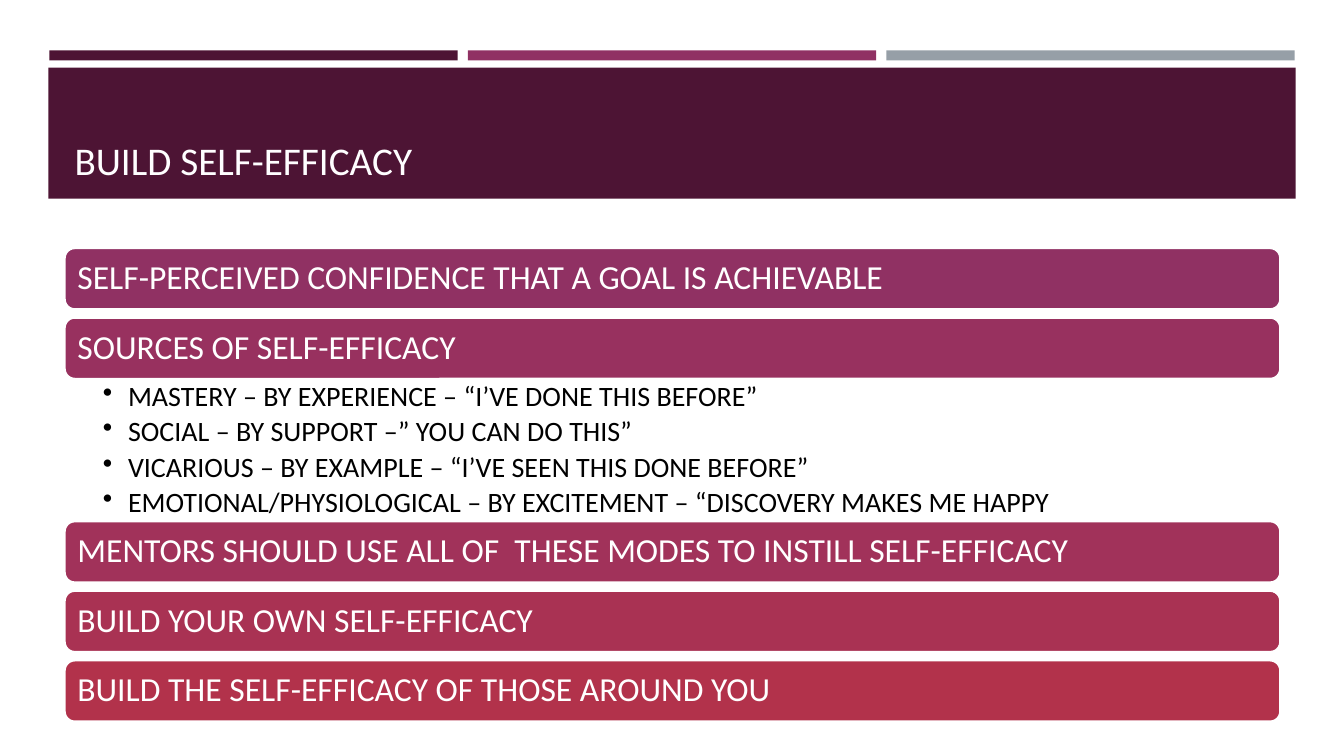
from dataclasses import dataclass

from lxml import etree
from pptx import Presentation
from pptx.dml.color import RGBColor
from pptx.enum.shapes import MSO_SHAPE
from pptx.enum.text import MSO_ANCHOR, PP_ALIGN
from pptx.oxml.ns import qn
from pptx.util import Inches, Pt

RECT = MSO_SHAPE.RECTANGLE
ROUNDED = MSO_SHAPE.ROUNDED_RECTANGLE
TOP, MIDDLE, BOTTOM = MSO_ANCHOR.TOP, MSO_ANCHOR.MIDDLE, MSO_ANCHOR.BOTTOM
LEFT = PP_ALIGN.LEFT


@dataclass(frozen=True)
class Theme:
    font: str = "Calibri"
    title_size: float = 28
    bar_size: float = 24
    bullet_size: float = 20
    dark: str = "4D1434"
    accents: tuple = ("4D1434", "903163", "969FA7")
    bars: tuple = ("903163", "98315F", "A1325A", "A93253", "B2324B")
    title_text: str = "FFFEFF"
    light: str = "FFFFFF"
    body_text: str = "000000"


THEME = Theme()

TITLE = "BUILD SELF-EFFICACY"
TOPICS = [
    ("SELF-PERCEIVED CONFIDENCE THAT A GOAL IS ACHIEVABLE", []),
    ("SOURCES OF SELF-EFFICACY", [
        "MASTERY – BY EXPERIENCE – “I’VE DONE THIS BEFORE”",
        "SOCIAL – BY SUPPORT –” YOU CAN DO THIS”",
        "VICARIOUS – BY EXAMPLE – “I’VE SEEN THIS DONE BEFORE”",
        "EMOTIONAL/PHYSIOLOGICAL – BY EXCITEMENT – “DISCOVERY MAKES ME HAPPY",
    ]),
    ("MENTORS SHOULD USE ALL OF  THESE MODES TO INSTILL SELF-EFFICACY", []),
    ("BUILD YOUR OWN SELF-EFFICACY", []),
    ("BUILD THE SELF-EFFICACY OF THOSE AROUND YOU", []),
]


def add_block(slide, kind, box, fill):
    s = slide.shapes.add_shape(kind, *map(Inches, box))
    s.shadow.inherit = False
    s.fill.solid()
    s.fill.fore_color.rgb = RGBColor.from_string(fill)
    s.line.fill.background()
    return s


def write(s, lines, size, color, anchor, insets):
    tf = s.text_frame
    tf.word_wrap = True
    tf.vertical_anchor = anchor
    tf.margin_left, tf.margin_top, tf.margin_right, tf.margin_bottom = map(Inches, insets)
    tf.text = "\n".join(lines)
    for p in tf.paragraphs:
        p.alignment = LEFT
        p.line_spacing = 0.9
        p.font.name = THEME.font
        p.font.size = Pt(size)
        p.font.color.rgb = RGBColor.from_string(color)
    return tf


def add_accent_strip(slide, left, top, width, height):
    gap = 0.1
    n = len(THEME.accents)
    w = (width - gap * (n - 1)) / n
    for i, color in enumerate(THEME.accents):
        add_block(slide, RECT, (left + i * (w + gap), top, w, height), color)


def add_title_banner(slide, left, top, width, height):
    s = add_block(slide, RECT, (left, top, width, height), THEME.dark)
    write(s, [TITLE], THEME.title_size, THEME.title_text, BOTTOM, (0.26, 0.1, 0.26, 0.14))


def add_bullets(slide, lines, left, top, width, height):
    s = slide.shapes.add_textbox(*map(Inches, (left, top, width, height)))
    tf = write(s, lines, THEME.bullet_size, THEME.body_text, TOP, (0.38, 0.03, 0.16, 0.03))
    for p in tf.paragraphs:
        p.space_after = Pt(3.75)
        pPr = p._p.get_or_add_pPr()
        pPr.set("marL", str(Inches(0.25)))
        pPr.set("indent", str(Inches(-0.25)))
        bullet = etree.Element(qn("a:buChar"), char="•")
        pPr.find(qn("a:defRPr")).addprevious(bullet)


def add_topic_list(slide, left, top, width):
    bar_height, gap, bullets_height = 0.61, 0.08, 1.41
    y = top
    for (heading, bullets), color in zip(TOPICS, THEME.bars):
        s = add_block(slide, ROUNDED, (left, y, width, bar_height), color)
        s.line.color.rgb = RGBColor.from_string(THEME.light)
        s.line.width = Pt(1.75)
        write(s, [heading], THEME.bar_size, THEME.light, MIDDLE, (0.1, 0.07, 0.1, 0.07))
        y += bar_height
        if bullets:
            add_bullets(slide, bullets, left, y, width, bullets_height)
            y += bullets_height
        else:
            y += gap


def main():
    prs = Presentation()
    prs.slide_width, prs.slide_height = Inches(13.33), Inches(7.5)
    slide = prs.slides.add_slide(prs.slide_layouts[6])
    add_accent_strip(slide, 0.49, 0.5, 12.35, 0.1)
    add_title_banner(slide, 0.48, 0.67, 12.37, 1.3)
    add_topic_list(slide, 0.64, 2.46, 12.06)
    prs.save("out.pptx")


if __name__ == "__main__":
    main()
